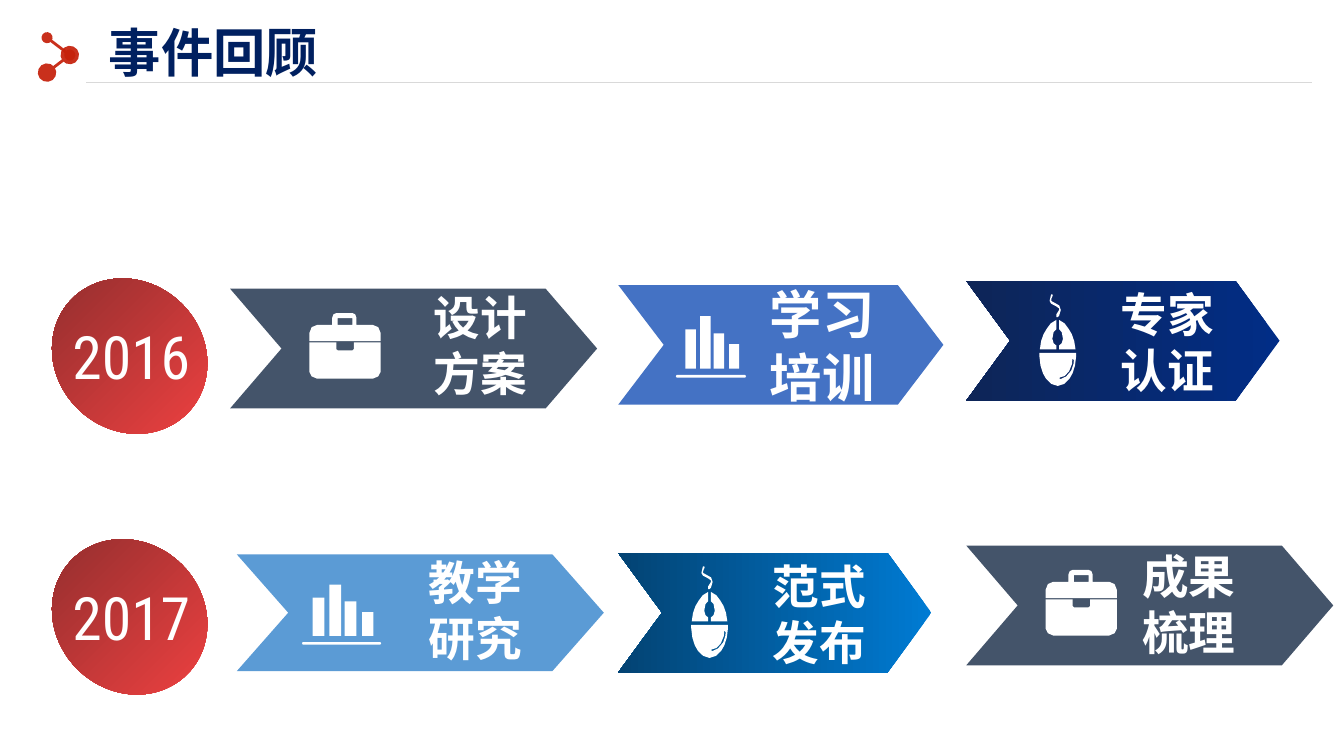
"""Build the event review slide: two years, each with three arrow-shaped steps."""
from lxml import etree
from pptx import Presentation
from pptx.dml.color import RGBColor
from pptx.enum.shapes import MSO_CONNECTOR, MSO_SHAPE
from pptx.enum.text import MSO_ANCHOR, MSO_AUTO_SIZE, PP_ALIGN
from pptx.oxml.ns import qn
from pptx.util import Pt

STRAIGHT = MSO_CONNECTOR.STRAIGHT
RECT, OVAL = MSO_SHAPE.RECTANGLE, MSO_SHAPE.OVAL
TOP, LEFT, NO_FIT = MSO_ANCHOR.TOP, PP_ALIGN.LEFT, MSO_AUTO_SIZE.NONE
CJK, DIGITS = "Noto Sans CJK SC", "Roboto Condensed"
COLORS = {
    "title": "002060", "accent": "C5210B", "rule": "D9D9D9", "white": "FFFFFF",
    "slate": "44546A", "blue": "4472C4", "sky": "5B9BD5",
    "navy": ("012D86", "0E2557"), "ocean": ("007BD3", "034373"),
    "red": ("FE4444", "832B2B"), "shadow": "000000",
}


def paint(sp, color):
    """Fill a shape with a plain colour or a two-stop gradient, without line or shadow."""
    value = COLORS[color]
    if isinstance(value, tuple):
        sp.fill.gradient()
        sp.fill.gradient_angle = 180
        for stop, position, code in zip(sp.fill.gradient_stops, (0, 1), value):
            stop.position = position
            stop.color.rgb = RGBColor.from_string(code)
    else:
        sp.fill.solid()
        sp.fill.fore_color.rgb = RGBColor.from_string(value)
    sp.line.fill.background()
    sp.shadow.inherit = False


def write(sp, lines, size, font, color="white", wrap=True):
    """Write left-aligned lines of text into a shape."""
    tf = sp.text_frame
    tf.word_wrap, tf.auto_size, tf.vertical_anchor = wrap, NO_FIT, TOP
    tf.text = "\n".join(lines)
    for p in tf.paragraphs:
        p.alignment = LEFT
        p.font.size, p.font.name = Pt(size), font
        p.font.color.rgb = RGBColor.from_string(COLORS[color])
        p.font.bold = font != DIGITS
        if font == DIGITS:
            rPr = p.runs[0]._r.get_or_add_rPr()
            effects = etree.SubElement(rPr, qn("a:effectLst"))
            shadow = etree.SubElement(effects, qn("a:outerShdw"), blurRad="38100",
                                      dist="38100", dir="2700000")
            black = etree.SubElement(shadow, qn("a:srgbClr"), val=COLORS["shadow"])
            etree.SubElement(black, qn("a:alpha"), val="43000")
        else:
            p.line_spacing = Pt(size * 1.2)
            latin = p._p.pPr.find(qn("a:defRPr")).find(qn("a:latin"))
            latin.addnext(etree.Element(qn("a:ea"), typeface=CJK))


prs = Presentation()
prs.slide_width, prs.slide_height = Pt(720), Pt(405)
s = prs.slides.add_slide(prs.slide_layouts[5])

title = s.shapes.title
title.left, title.top, title.width, title.height = Pt(51.1), Pt(7.2), Pt(126.7), Pt(41)
write(title, ["事件回顾"], 28, "Arial", "title", wrap=False)

LINES = [
    (37.4, 29.5, 25.2, 38.9, "accent", 1.5, "lg"),
    (25.2, 20.2, 37.4, 29.5, "accent", 1.5, "med"),
    (46.1, 44.2, 702.7, 44.2, "rule", 0.5, None),
]
for x1, y1, x2, y2, color, width, dot in LINES:
    c = s.shapes.add_connector(STRAIGHT, Pt(x1), Pt(y1), Pt(x2), Pt(y2))
    c.line.width = Pt(width)
    c.line.color.rgb = RGBColor.from_string(COLORS[color])
    if dot:
        ln = c.line._get_or_add_ln()
        etree.SubElement(ln.find(".//" + qn("a:srgbClr")), qn("a:alpha"), val="93000")
        for end in ("a:headEnd", "a:tailEnd"):
            etree.SubElement(ln, qn(end), type="oval", w=dot, len=dot)
    etree.SubElement(c._element.spPr, qn("a:effectLst"))

button = [(49.7, 25.9), (51.1, 27.4), (51.8, 31), (51.1, 33.4), (49.7, 34.6), (49.7, 36.7),
          (58.5, 36.7), (57.8, 32.2), (56.5, 28.5), (54.7, 25.5), (52.6, 22.7), (49.7, 20.9)]
half_body = [(39.1, 38.6), (39.1, 40.3), (39.7, 45.4), (41, 49.5), (42.7, 52.5),
             (45.5, 55.2), (48.9, 56.3)]
body = half_body + [(97.9 - x, y) for x, y in reversed(half_body)]
gleam = [(57.6, 42.5), (56.8, 41.6), (56.6, 44.5), (55, 48.5), (52.6, 51), (50, 51.8),
         (49.8, 52.4), (50.6, 52.6), (53.5, 51.2), (56.2, 48), (57.4, 44.5)]
cord = [(45.4, 12.2), (48.2, 13.7), (49.7, 14.8), (49.7, 15.6), (48.2, 18), (48.2, 19.4),
        (49, 19.4), (49.7, 18.7), (50.6, 15.6), (49.8, 13.2), (46.8, 11.5), (45.5, 10.8),
        (45.6, 9.5), (46.3, 7.9), (46.1, 7.2), (45.4, 7.3), (44.6, 10.8)]
case = [(66.3, 32.4), (65.5, 33.1), (57.7, 33.1), (56.9, 32.4), (56.9, 28.8), (42.5, 28.8),
        (42.5, 44.6), (43.7, 47), (46.6, 48.2), (76.5, 48.2), (79.4, 47), (80.6, 44.6),
        (80.6, 28.8), (66.3, 28.8)]
lid = [(76.5, 19.4), (67.7, 19.4), (67.7, 15.5), (67, 13.7), (65.5, 13), (57, 13),
       (55.4, 13.7), (54.7, 15.5), (54.7, 19.4), (46.6, 19.4), (43.7, 20.6), (42.5, 23.6),
       (42.5, 28.1), (80.6, 28.1), (80.6, 23.6), (79.4, 20.6)]
handle = [(57.6, 15.8), (65.5, 15.8), (65.5, 19.4), (57.6, 19.4)]
baseline = [(31.3, 48.2), (68.1, 48.2), (68.5, 48.9), (68.1, 49.6), (31.3, 49.6), (30.9, 48.9)]
ICONS = {
    "case": [[case], [lid, handle]],
    "chart": [[baseline]],
    "mouse": [[button], [[(97.9 - x, y) for x, y in button]], [body, gleam], [cord]],
}
BARS = [(36, 23.8, 5.6), (43.9, 16.6, 5.6), (51.1, 25.9, 5.6), (59.4, 31.7, 5.4)]
BAR_FOOT, CHART_W, STEP_H = 44.8, 174.2, 64.1

STEPS = [
    ("case", 123.3, 154.7, 196.6, 64.1, "slate", ["设计", "方案"], 25, 225.4, 151.2, 147.6),
    ("chart", 331.2, 152.7, 174.2, 64.1, "blue", ["学习", "培训"], 28, 405.4, 147.6, 114.5),
    ("mouse", 517.7, 150.5, 167.8, 64.1, "navy", ["专家认证"], 25, 593.3, 149.4, 75.6),
    ("chart", 126.9, 297, 196.6, 62.5, "sky", ["教学", "研究"], 25, 222.5, 293, 147.6),
    ("mouse", 331.2, 296.2, 167.8, 64.1, "ocean", ["范式发布"], 25, 406.8, 295.2, 75.6),
    ("case", 517.7, 292.3, 196.6, 64.1, "slate", ["成果", "梳理"], 25, 604.8, 290.2, 147.6),
]
for icon, x, y, w, h, color, lines, size, text_x, text_y, text_w in STEPS:
    sx, sy = (w / CHART_W, h / STEP_H) if icon == "chart" else (1, 1)
    notch = 0.14 * w
    arrow = [(w - notch, h), (0, h), (notch, h / 2), (0, 0), (w - notch, 0), (w, h / 2)]
    outlines = [([arrow], color, 1, 1)]
    outlines += [(contours, "white", sx, sy) for contours in ICONS[icon]]
    for contours, fill, kx, ky in outlines:
        placed = [[(Pt(x + px * kx), Pt(y + py * ky)) for px, py in pts] for pts in contours]
        fb = s.shapes.build_freeform(*placed[0][0], scale=1.0)
        fb.add_line_segments(placed[0][1:], close=True)
        for pts in placed[1:]:
            fb.move_to(*pts[0])
            fb.add_line_segments(pts[1:], close=True)
        paint(fb.convert_to_shape(), fill)
    if icon == "chart":
        for bar_x, bar_y, bar_w in BARS:
            bar = s.shapes.add_shape(RECT, Pt(x + bar_x * sx), Pt(y + bar_y * sy),
                                     Pt(bar_w * sx), Pt((BAR_FOOT - bar_y) * sy))
            paint(bar, "white")
    tb = s.shapes.add_textbox(Pt(text_x), Pt(text_y), Pt(text_w), Pt(size * 2.4 + 7.2))
    write(tb, lines, size, CJK)

for year, y in (("2016", 151.2), ("2017", 290.9)):
    disc = s.shapes.add_shape(OVAL, Pt(25.9), Pt(y), Pt(87.1), Pt(79.2))
    disc.rotation = 45
    paint(disc, "red")
    tb = s.shapes.add_textbox(Pt(31.7), Pt(y + 16.6), Pt(92.2), Pt(46.1))
    write(tb, [year], 32, DIGITS)

prs.save("out.pptx")
